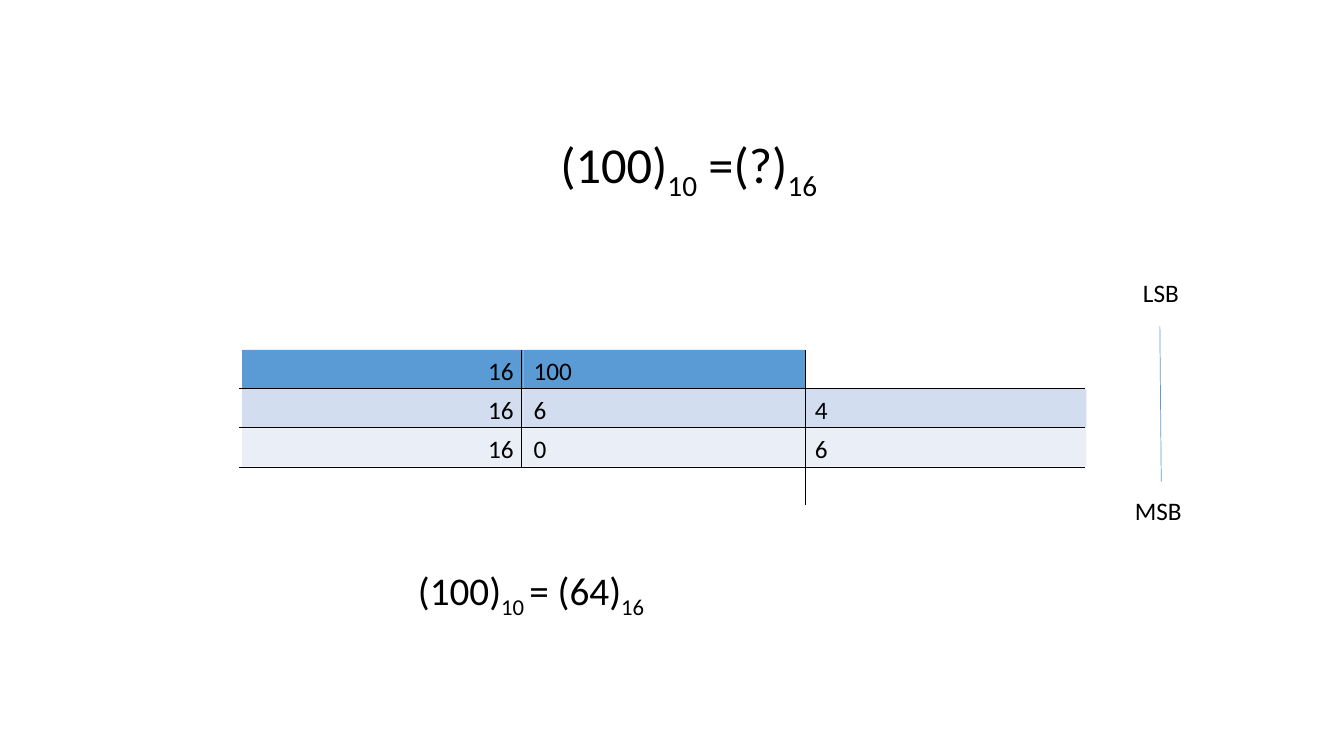
from lxml import etree
from pptx import Presentation
from pptx import util as u
from pptx.dml.color import RGBColor
from pptx.enum import shapes, text
from pptx.oxml.ns import qn

BLACK = RGBColor(0x00, 0x00, 0x00)
BLUE = RGBColor(0x5B, 0x9B, 0xD5)
LIGHT = RGBColor(0xD2, 0xDE, 0xEF)
PALE = RGBColor(0xEA, 0xEF, 0xF7)
LEFT = text.PP_ALIGN.LEFT
RIGHT = text.PP_ALIGN.RIGHT
CENTER = text.PP_ALIGN.CENTER


def write(frame, parts, size=18, align=LEFT, color=BLACK, font="Calibri", fit=True):
    """Fill a frame with runs, every second one a subscript."""
    frame.word_wrap = True
    frame.vertical_anchor = text.MSO_ANCHOR.TOP
    kind = text.MSO_AUTO_SIZE
    frame.auto_size = kind.SHAPE_TO_FIT_TEXT if fit else kind.NONE
    para = frame.paragraphs[0]
    para.alignment = align
    for i, part in enumerate(parts):
        run = para.add_run()
        run.text = part
        run.font.size = u.Pt(size)
        run.font.name = font
        run.font.color.rgb = color
        if i % 2:
            run.font._element.set("baseline", "-25000")


class Board:
    """Hold the slide and its line style, and draw elements in points."""

    def __init__(self, slide, width=0.5):
        self.slide = slide
        self.width = width

    def title(self, box, parts, **style):
        head = self.slide.shapes.title
        head.left, head.top, head.width, head.height = map(u.Pt, box)
        write(head.text_frame, parts, **style)

    def label(self, box, parts, **style):
        note = self.slide.shapes.add_textbox(*map(u.Pt, box))
        write(note.text_frame, parts, **style)

    def cell(self, box, value, fill, align):
        rect = self.slide.shapes.add_shape(
            shapes.MSO_SHAPE.RECTANGLE, *map(u.Pt, box))
        rect.shadow.inherit = False
        rect.fill.solid()
        rect.fill.fore_color.rgb = fill
        rect.line.fill.background()
        write(rect.text_frame, [value], align=align, fit=False)

    def line(self, ends, color=BLACK):
        rule = self.slide.shapes.add_connector(
            shapes.MSO_CONNECTOR.STRAIGHT, *map(u.Pt, ends))
        rule.line.color.rgb = color
        rule.line.width = u.Pt(self.width)
        etree.SubElement(rule._element.spPr, qn("a:effectLst"))


def main():
    deck = Presentation()
    deck.slide_width, deck.slide_height = u.Pt(960), u.Pt(540)
    board = Board(deck.slides.add_slide(deck.slide_layouts[5]))
    board.title((393, 91.5, 306, 51), ["(100)", "10", " =(?)", "16"], size=36)

    left, top, wide, pitch = 173, 250, 201, 28
    rows = [(BLUE, ["16", "100"]),
            (LIGHT, ["16", "6", "4"]),
            (PALE, ["16", "0", "6"])]
    for i, (fill, values) in enumerate(rows):
        for j, value in enumerate(values):
            box = (left + j * wide, top + i * pitch, wide, 27.4)
            board.cell(box, value, fill, LEFT if j else RIGHT)

    board.line((372.5, top, 372.5, top + 3 * pitch))
    board.line((575, top, 575, 361))
    for i in range(1, 4):
        y = top + i * pitch - 0.5
        board.line((171, y, 775, y))

    board.line((828.5, 233, 829.5, 344), color=BLUE)
    board.label((799, 194.5, 60.5, 29.5), ["LSB"], align=CENTER)
    board.label((803.5, 350.5, 58.5, 29), ["MSB"])
    board.label((291.5, 401, 376, 63.5), ["(100)", "10 ", "= (64)", "16"], size=28)
    deck.save("out.pptx")


if __name__ == "__main__":
    main()
